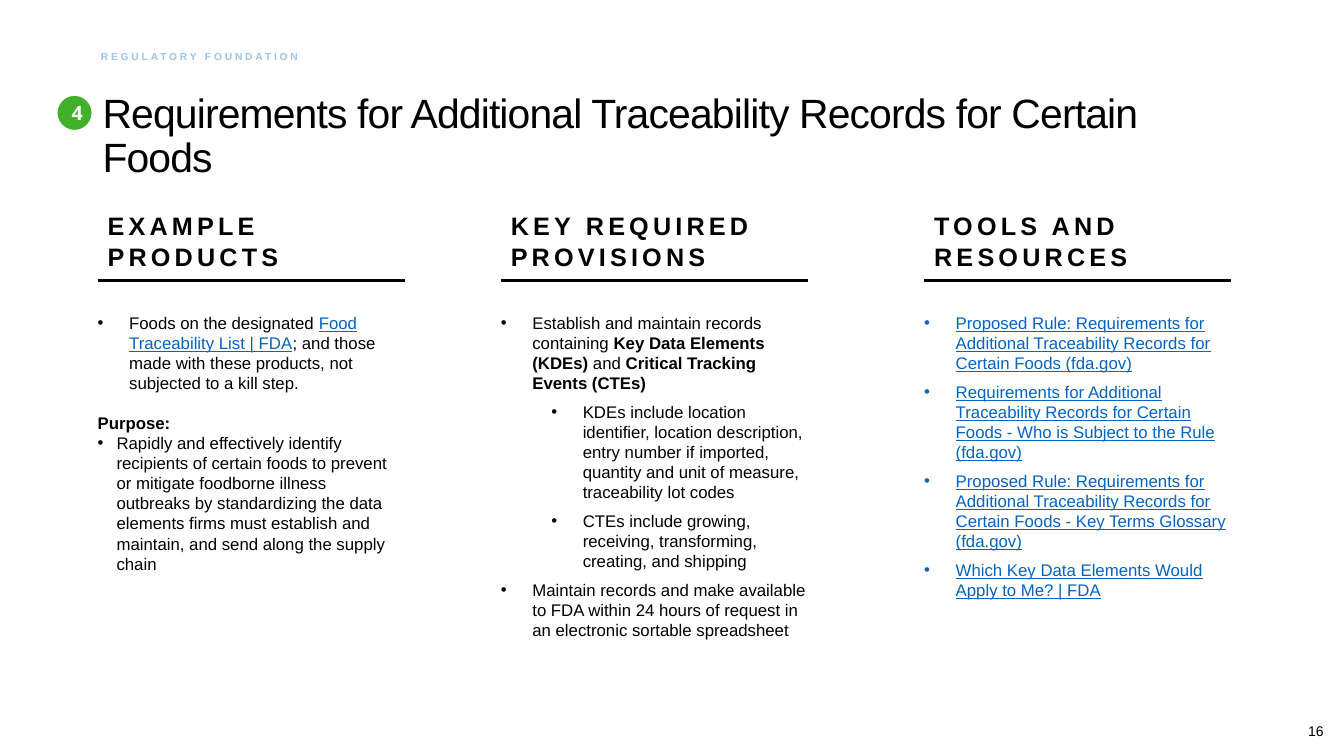
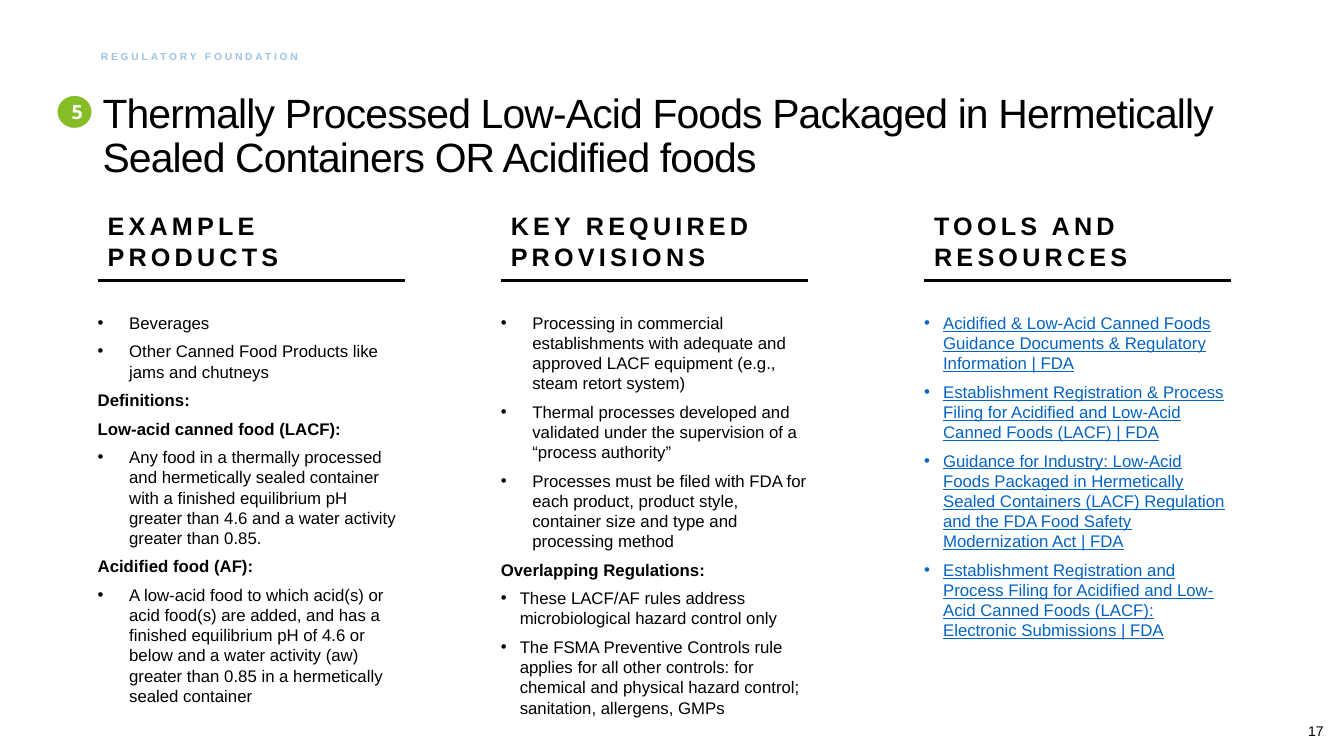
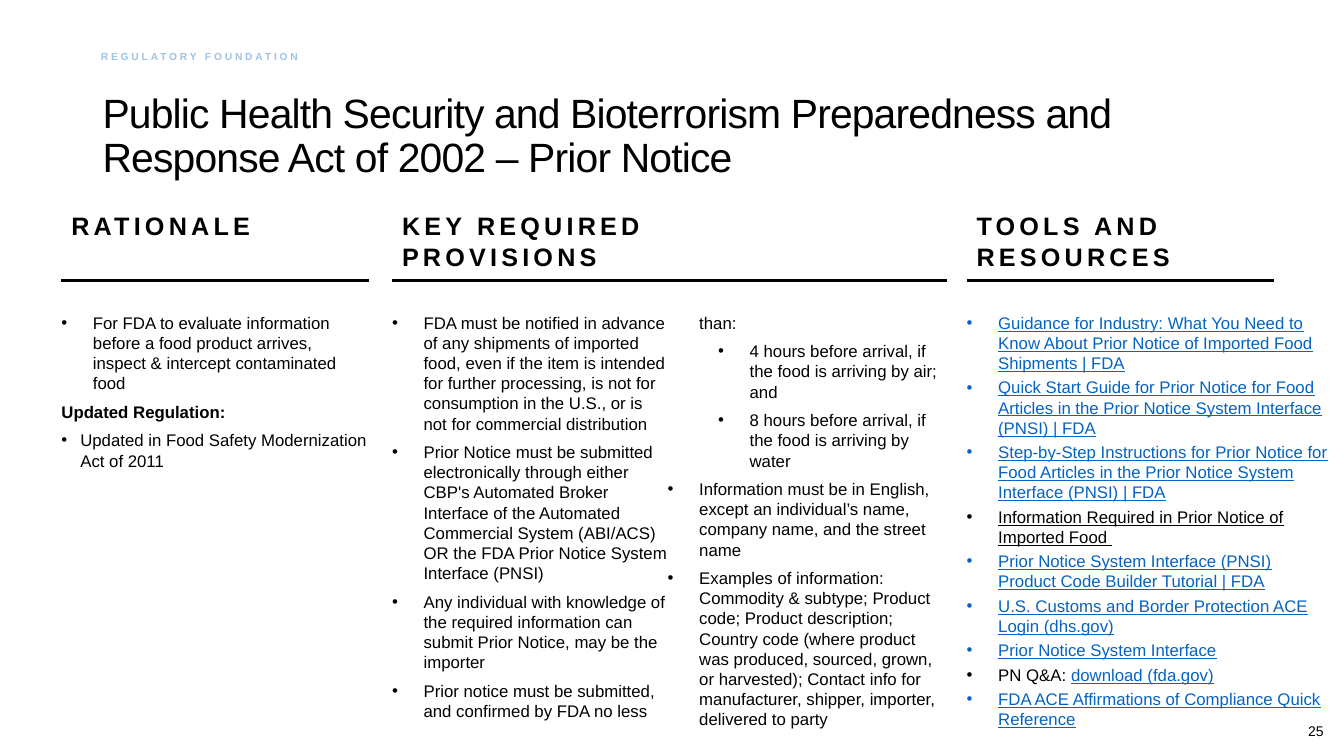
from lxml.etree import SubElement
from pptx import Presentation
from pptx.dml.color import RGBColor
from pptx.enum.shapes import MSO_CONNECTOR, MSO_SHAPE
from pptx.enum.text import MSO_ANCHOR as ANCHOR, PP_ALIGN as ALIGN
from pptx.oxml.ns import qn
from pptx.util import Pt

COLORS = {
    "black": "000000",
    "white": "FFFFFF",
    "eyebrow": "9DC3E6",
    "link": "0563C1",
    "green": "43B02A",
    "lime": "86BC25",
}

FONTS = {
    "title": {"size": Pt(29.2)},
    "eyebrow": {"size": Pt(7.3), "bold": True},
    "heading": {"size": Pt(18), "bold": True},
    "text": {"size": Pt(12)},
    "bold": {"size": Pt(12), "bold": True},
    "link": {"size": Pt(12), "underline": True},
    "underlined": {"size": Pt(12), "underline": True},
    "page": {"size": Pt(10)},
    "badge": {"size": Pt(14), "bold": True, "name": "Open Sans"},
}
FONT_COLORS = {"eyebrow": "eyebrow", "link": "link", "badge": "white"}
TRACKING = {"title": -60, "eyebrow": 200, "heading": 300}

INDENTS = {"wide": (22.5, 22.5), "narrow": (13.5, 13.5), "sub": (58.5, 22.5)}
AFTER = {"space_after": Pt(6)}
BEFORE = {"space_before": Pt(3)}
TIGHT = {"space_after": Pt(0)}

HEADING_TOP, RULE_TOP, BODY_TOP = 146.9, 200.2, 223.2
HEADING_WIDTHS = {
    "EXAMPLE PRODUCTS": 187.2,
    "RATIONALE": 187.2,
    "KEY REQUIRED PROVISIONS": 233.3,
    "TOOLS AND RESOURCES": 194.4,
}
COLUMN_WIDTH = 219.4
LEFTS = (69.8, 357.8, 660.2)
NOTICE_LEFTS = (43.9, 280.1, 690.5)

SLIDES = [
    {
        "title": "Requirements for Additional Traceability Records for Certain Foods",
        "page": "16",
        "badge": ("4", "green", 25.9),
        "lefts": LEFTS,
        "columns": [
            {
                "heading": "EXAMPLE PRODUCTS",
                "height": 189.4,
                "spacing": TIGHT,
                "body": [
                    ("wide", ("text", "Foods on the designated "),
                     ("link", "Food Traceability List | FDA"),
                     ("text", "; and those made with these products, not subjected to a kill step.")),
                    ("spaced", ("bold", "Purpose:")),
                    ("narrow", ("text", "Rapidly and effectively identify recipients of certain foods to prevent or mitigate foodborne illness outbreaks by standardizing the data elements firms must establish and maintain, and send along the supply chain")),
                ],
            },
            {
                "heading": "KEY REQUIRED PROVISIONS",
                "height": 236.2,
                "body": [
                    ("wide", ("text", "Establish and maintain records containing "),
                     ("bold", "Key Data Elements (KDEs)"), ("text", " and "),
                     ("bold", "Critical Tracking Events (CTEs)")),
                    ("sub", ("text", "KDEs include location identifier, location description, entry number if imported, quantity and unit of measure, traceability lot codes")),
                    ("sub", ("text", "CTEs include growing, receiving, transforming, creating, and shipping")),
                    ("wide", ("text", "Maintain records and make available to FDA within 24 hours of request in an electronic sortable spreadsheet")),
                ],
            },
            {
                "heading": "TOOLS AND RESOURCES",
                "height": 207.4,
                "body": [
                    ("wide", ("link", "Proposed Rule: Requirements for Additional Traceability Records for Certain Foods (fda.gov)")),
                    ("wide", ("link", "Requirements for Additional Traceability Records for Certain Foods - Who is Subject to the Rule (fda.gov)")),
                    ("wide", ("link", "Proposed Rule: Requirements for Additional Traceability Records for Certain Foods - Key Terms Glossary (fda.gov)")),
                    ("wide", ("link", "Which Key Data Elements Would Apply to Me? | FDA")),
                ],
            },
        ],
    },
    {
        "title": "Thermally Processed Low-Acid Foods Packaged in Hermetically Sealed Containers OR Acidified foods",
        "page": "17",
        "badge": ("5", "lime", 24.5),
        "lefts": LEFTS,
        "columns": [
            {
                "heading": "EXAMPLE PRODUCTS",
                "height": 303.8,
                "body": [
                    ("wide", ("text", "Beverages")),
                    ("wide", ("text", "Other Canned Food Products like jams and chutneys")),
                    ("label", ("bold", "Definitions:")),
                    ("label", ("bold", "Low-acid canned food (LACF):")),
                    ("wide", ("text", "Any food in a thermally processed and hermetically sealed container with a finished equilibrium pH greater than 4.6 and a water activity greater than 0.85.")),
                    ("label", ("bold", "Acidified food (AF):")),
                    ("wide", ("text", "A low-acid food to which acid(s) or acid food(s) are added, and has a finished equilibrium pH of 4.6 or below and a water activity (aw) greater than 0.85 in a hermetically sealed container")),
                ],
            },
            {
                "heading": "KEY REQUIRED PROVISIONS",
                "height": 292.3,
                "body": [
                    ("wide", ("text", "Processing in commercial establishments with adequate and approved LACF equipment (e.g., steam retort system)")),
                    ("wide", ("text", "Thermal processes developed and validated under the supervision of a “process authority”")),
                    ("wide", ("text", "Processes must be filed with FDA for each product, product style, container size and type and processing method")),
                    ("label", ("bold", "Overlapping Regulations:")),
                    ("narrow", ("text", "These LACF/AF rules address microbiological hazard control only")),
                    ("narrow", ("text", "The FSMA Preventive Controls rule applies for all other controls: for chemical and physical hazard control; sanitation, allergens, GMPs")),
                ],
            },
            {
                "heading": "TOOLS AND RESOURCES",
                "height": 236.2,
                "body": [
                    ("narrow", ("link", "Acidified & Low-Acid Canned Foods Guidance Documents & Regulatory Information | FDA")),
                    ("narrow", ("link", "Establishment Registration & Process Filing for Acidified and Low-Acid Canned Foods (LACF) | FDA")),
                    ("narrow", ("link", "Guidance for Industry: Low-Acid Foods Packaged in Hermetically Sealed Containers (LACF) Regulation and the FDA Food Safety Modernization Act | FDA")),
                    ("narrow", ("link", "Establishment Registration and Process Filing for Acidified and Low-Acid Canned Foods (LACF): Electronic Submissions | FDA")),
                ],
            },
        ],
    },
    {
        "title": "Public Health Security and Bioterrorism Preparedness and Response Act of 2002 – Prior Notice",
        "page": "25",
        "lefts": NOTICE_LEFTS,
        "columns": [
            {
                "heading": "RATIONALE",
                "height": 113.8,
                "body": [
                    ("wide", ("text", "For FDA to evaluate information before a food product arrives, inspect & intercept contaminated food")),
                    ("label", ("bold", "Updated Regulation:")),
                    ("narrow", ("text", "Updated in Food Safety Modernization Act of 2011")),
                ],
            },
            {
                "heading": "KEY REQUIRED PROVISIONS",
                "rule": 396,
                "width": 393.8,
                "height": 233.3,
                "text_columns": 2,
                "body": [
                    ("wide", ("text", "FDA must be notified in advance of any shipments of imported food, even if the item is intended for further processing, is not for consumption in the U.S., or is not for commercial distribution")),
                    ("wide", ("text", "Prior Notice must be submitted electronically through either CBP's Automated Broker Interface of the Automated Commercial System (ABI/ACS) OR the FDA Prior Notice System Interface (PNSI)")),
                    ("wide", ("text", "Any individual with knowledge of the required information can submit Prior Notice, may be the importer")),
                    ("wide", ("text", "Prior notice must be submitted, and confirmed by FDA no less than:")),
                    ("sub", ("text", "4 hours before arrival, if the food is arriving by air; and")),
                    ("sub", ("text", "8 hours before arrival, if the food is arriving by water")),
                    ("wide", ("text", "Information must be in English, except an individual’s name, company name, and the street name")),
                    ("wide", ("text", "Examples of information: Commodity & subtype; Product code; Product description; Country code (where product was produced, sourced, grown, or harvested); Contact info for manufacturer, shipper, importer, delivered to party")),
                ],
            },
            {
                "heading": "TOOLS AND RESOURCES",
                "width": 258.5,
                "height": 300.2,
                "spacing": BEFORE,
                "body": [
                    ("wide", ("link", "Guidance for Industry: What You Need to Know About Prior Notice of Imported Food Shipments | FDA")),
                    ("wide", ("link", "Quick Start Guide for Prior Notice for Food Articles in the Prior Notice System Interface (PNSI) | FDA")),
                    ("wide", ("link", "Step-by-Step Instructions for Prior Notice for Food Articles in the Prior Notice System Interface (PNSI) | FDA")),
                    ("wide", ("underlined", "Information Required in Prior Notice of Imported Food ")),
                    ("wide", ("link", "Prior Notice System Interface (PNSI) Product Code Builder Tutorial | FDA")),
                    ("wide", ("link", "U.S. Customs and Border Protection ACE Login (dhs.gov)")),
                    ("wide", ("link", "Prior Notice System Interface")),
                    ("wide", ("text", "PN Q&A: "), ("link", "download (fda.gov)")),
                    ("wide", ("link", "FDA ACE Affirmations of Compliance Quick Reference")),
                ],
            },
        ],
    },
]


def add_run(paragraph, style, text):
    run = paragraph.add_run()
    run.text = text
    for name, value in ({"name": "Arial"} | FONTS[style]).items():
        setattr(run.font, name, value)
    run.font.color.rgb = RGBColor.from_string(COLORS[FONT_COLORS.get(style, "black")])
    if style in TRACKING:
        run.font._element.set("spc", str(TRACKING[style]))


def add_text(slide, box, style="text", text="", inset=True, anchor=ANCHOR.TOP, **paragraph_format):
    frame = slide.shapes.add_textbox(*map(Pt, box)).text_frame
    frame.word_wrap = True
    frame.vertical_anchor = anchor
    if not inset:
        for side in ("left", "right", "top", "bottom"):
            setattr(frame, f"margin_{side}", 0)
    paragraph = frame.paragraphs[0]
    for name, value in paragraph_format.items():
        setattr(paragraph, name, value)
    if text:
        add_run(paragraph, style, text)
    return frame


presentation = Presentation()
presentation.slide_width, presentation.slide_height = Pt(960), Pt(540)

for content in SLIDES:
    slide = presentation.slides.add_slide(presentation.slide_layouts[6])
    add_text(slide, (66.2, 28.8, 828, 104.4), "title", content["title"],
             anchor=ANCHOR.BOTTOM, line_spacing=0.9)
    add_text(slide, (72, 36.7, 264, 15.8), "eyebrow", "REGULATORY FOUNDATION",
             inset=False, line_spacing=0.9, space_before=Pt(10))

    for left, column in zip(content["lefts"], content["columns"]):
        heading = column["heading"]
        add_text(slide, (left, HEADING_TOP, HEADING_WIDTHS[heading], 51), "heading", heading)

        rule_right = left + column.get("rule", COLUMN_WIDTH)
        rule = slide.shapes.add_connector(
            MSO_CONNECTOR.STRAIGHT, Pt(left), Pt(RULE_TOP), Pt(rule_right), Pt(RULE_TOP))
        rule.line.color.rgb = RGBColor.from_string(COLORS["black"])
        rule.line.width = Pt(2.25)
        SubElement(rule._element.spPr, qn("a:effectLst"))

        width = column.get("width", COLUMN_WIDTH)
        frame = add_text(slide, (left, BODY_TOP, width, column["height"]), inset=False)
        if "text_columns" in column:
            frame._txBody.bodyPr.set("numCol", str(column["text_columns"]))
        for index, (kind, *runs) in enumerate(column["body"]):
            paragraph = frame.add_paragraph() if index else frame.paragraphs[0]
            for name, value in column.get("spacing", AFTER).items():
                setattr(paragraph, name, value)
            if kind == "spaced":
                paragraph.space_before = Pt(13.8)
            if kind in INDENTS:
                margin, hanging = INDENTS[kind]
                paragraph.level = int(kind == "sub")
                properties = paragraph._p.get_or_add_pPr()
                properties.set("marL", str(Pt(margin)))
                properties.set("indent", str(-Pt(hanging)))
                SubElement(properties, qn("a:buFont"), typeface="Arial")
                SubElement(properties, qn("a:buChar"), char="•")
            for style, text in runs:
                add_run(paragraph, style, text)

    add_text(slide, (770.4, 512.6, 182.2, 19.4), "page", content["page"], alignment=ALIGN.RIGHT)

    if "badge" in content:
        number, color, height = content["badge"]
        badge = slide.shapes.add_shape(MSO_SHAPE.OVAL, Pt(40.3), Pt(67.7), Pt(25.9), Pt(height))
        badge.shadow.inherit = False
        badge.fill.solid()
        badge.fill.fore_color.rgb = RGBColor.from_string(COLORS[color])
        badge.line.color.rgb = RGBColor.from_string(COLORS["white"])
        badge.line.width = Pt(1.5)
        frame = badge.text_frame
        frame.vertical_anchor = ANCHOR.MIDDLE
        for side in ("left", "right", "top", "bottom"):
            setattr(frame, f"margin_{side}", Pt(7.2))
        frame.paragraphs[0].alignment = ALIGN.CENTER
        add_run(frame.paragraphs[0], "badge", number)

presentation.save("out.pptx")
